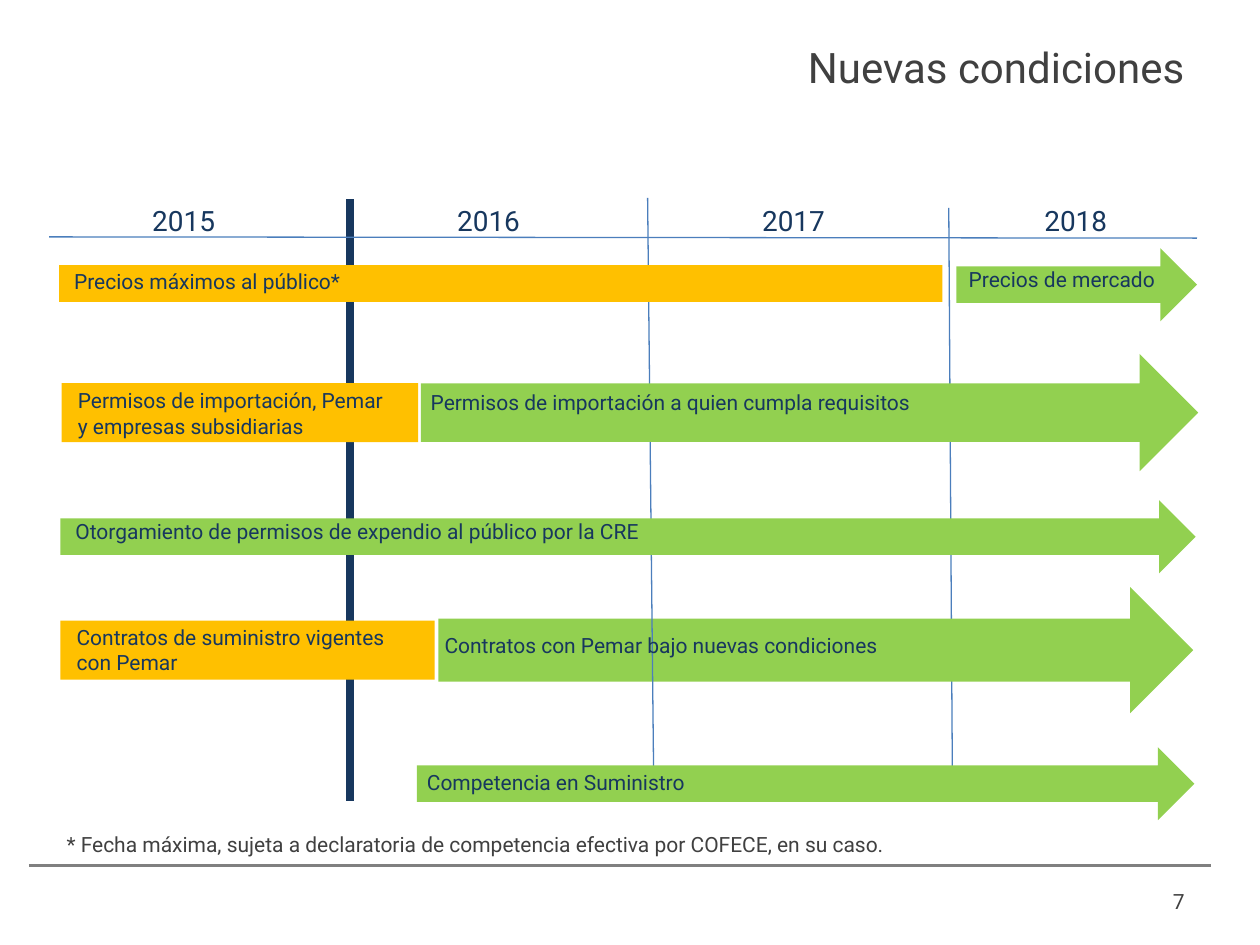
"""Timeline slide: how fuel market conditions change from 2015 to 2018."""
from dataclasses import dataclass

from lxml.etree import SubElement
from pptx import Presentation
from pptx.dml.color import RGBColor as Rgb
from pptx.enum.shapes import MSO_CONNECTOR as Link, MSO_SHAPE as Form
from pptx.enum.text import MSO_ANCHOR as Anchor, PP_ALIGN as Align
from pptx.oxml.ns import qn
from pptx.util import Inches, Pt


@dataclass(frozen=True)
class Theme:
    font: str = "Roboto"
    navy: str = "17375E"
    gray: str = "404040"
    rule: str = "808080"
    blue: str = "4B7EBC"
    gold: str = "FFC000"
    green: str = "92D050"
    head: int = 24
    year: int = 16
    body: int = 12
    thin: float = 0.75
    foot: float = 1.5
    bold: float = 4.5


T = Theme()
COLS, ROWS = 100, 75
TITLE = "Nuevas condiciones"
NOTE = "* Fecha máxima, sujeta a declaratoria de competencia efectiva por COFECE, en su caso."
PAGE = "7"
YEARS = [("2015", 11.1), ("2016", 35.3), ("2017", 59.5), ("2018", 81.9)]

# kind, left, right, middle row, height
BACK_BAR = ("next", 34.8, 94.7, 51.6, 10)
BARS = [
    ("next", 4.8, 94.9, 42.6, 5.8),
    ("next", 33.4, 95.1, 32.75, 9.3),
    ("now", 4.9, 33.2, 32.75, 4.7),
    ("next", 75.9, 95, 22.6, 5.8),
    ("now", 4.7, 74.8, 22.5, 2.9),
    ("next", 33.1, 94.8, 62.2, 5.8),
    ("now", 4.8, 34.5, 51.6, 4.7),
]
BACK_RULES = [
    (2.3, 68.7, 96.1, 68.7, T.rule, T.foot),
    (75.3, 16.5, 75.6, 63.6, T.blue, T.thin),
    (27.8, 15.8, 27.8, 63.6, T.navy, T.bold),
]
RULES = [
    (51.4, 15.7, 51.9, 63.6, T.blue, T.thin),
    (3.9, 18.8, 95, 18.9, T.blue, T.thin),
]
LABELS = [
    ("Precios máximos al público*", 4.9, 20.8, 69.7, 3),
    ("Precios de mercado", 75.9, 20.7, 19, 3),
    ("Permisos de importación, Pemar y empresas subsidiarias", 5.2, 30.3, 26.6, 5),
    ("Permisos de importación a quien cumpla requisitos", 33.2, 30.4, 40.3, 3),
    ("Otorgamiento de permisos de expendio al público por la CRE", 5, 40.7, 89.9, 3),
    ("Contratos con Pemar bajo nuevas condiciones", 34.3, 49.7, 61.7, 3),
    ("Contratos de suministro vigentes\ncon Pemar", 5.1, 49.1, 45.4, 5),
    ("Competencia en Suministro", 32.9, 60.6, 27.3, 3),
]

deck = Presentation()
deck.slide_width, deck.slide_height = Inches(10), Inches(7.5)
slide = deck.slides.add_slide(deck.slide_layouts[5])
shapes = slide.shapes


def across(col):
    return round(deck.slide_width * col / COLS)


def down(row):
    return round(deck.slide_height * row / ROWS)


def frame(left, top, width, height):
    return across(left), down(top), across(width), down(height)


def write(box, text, size, color, align=Align.LEFT, anchor=Anchor.TOP):
    body = box.text_frame
    body.text = text
    body.word_wrap = True
    body.vertical_anchor = anchor
    for para in body.paragraphs:
        para.alignment = align
        for run in para.runs:
            run.font.name, run.font.size = T.font, Pt(size)
            run.font.color.rgb = Rgb.from_string(color)
    return body


def label(text, *place, size=T.body, color=T.navy, **style):
    return write(shapes.add_textbox(*frame(*place)), text, size, color, **style)


def draw_bar(kind, left, right, mid, height):
    form, color = {"now": (Form.RECTANGLE, T.gold),
                   "next": (Form.RIGHT_ARROW, T.green)}[kind]
    bar = shapes.add_shape(form, *frame(left, mid - height / 2, right - left, height))
    bar.shadow.inherit = False
    bar.fill.solid()
    bar.fill.fore_color.rgb = Rgb.from_string(color)
    bar.line.fill.background()


def draw_rule(x1, y1, x2, y2, color, width):
    rule = shapes.add_connector(Link.STRAIGHT, across(x1), down(y1), across(x2), down(y2))
    rule.line.color.rgb = Rgb.from_string(color)
    rule.line.width = Pt(width)
    SubElement(rule._element.spPr, qn("a:effectLst"))


def main():
    title = shapes.title
    title.left, title.top, title.width, title.height = frame(18.1, 2.8, 76.9, 9.5)
    write(title, TITLE, T.head, T.gray, Align.RIGHT)

    for rule in BACK_RULES:
        draw_rule(*rule)
    draw_bar(*BACK_BAR)
    for rule in RULES:
        draw_rule(*rule)
    for bar in BARS:
        draw_bar(*bar)

    for year, left in YEARS:
        label(year, left, 15.7, 8.8, 3.7, size=T.year)
    for item in LABELS:
        label(*item)

    note = label(NOTE, 4.3, 65.5, 92.2, 3.6, color=T.gray, align=Align.JUSTIFY)
    note.paragraphs[0].space_after = Pt(6)
    label(PAGE, 71.7, 69.5, 23.3, 4, color=T.gray, align=Align.RIGHT, anchor=Anchor.MIDDLE)
    deck.save("out.pptx")


if __name__ == "__main__":
    main()
